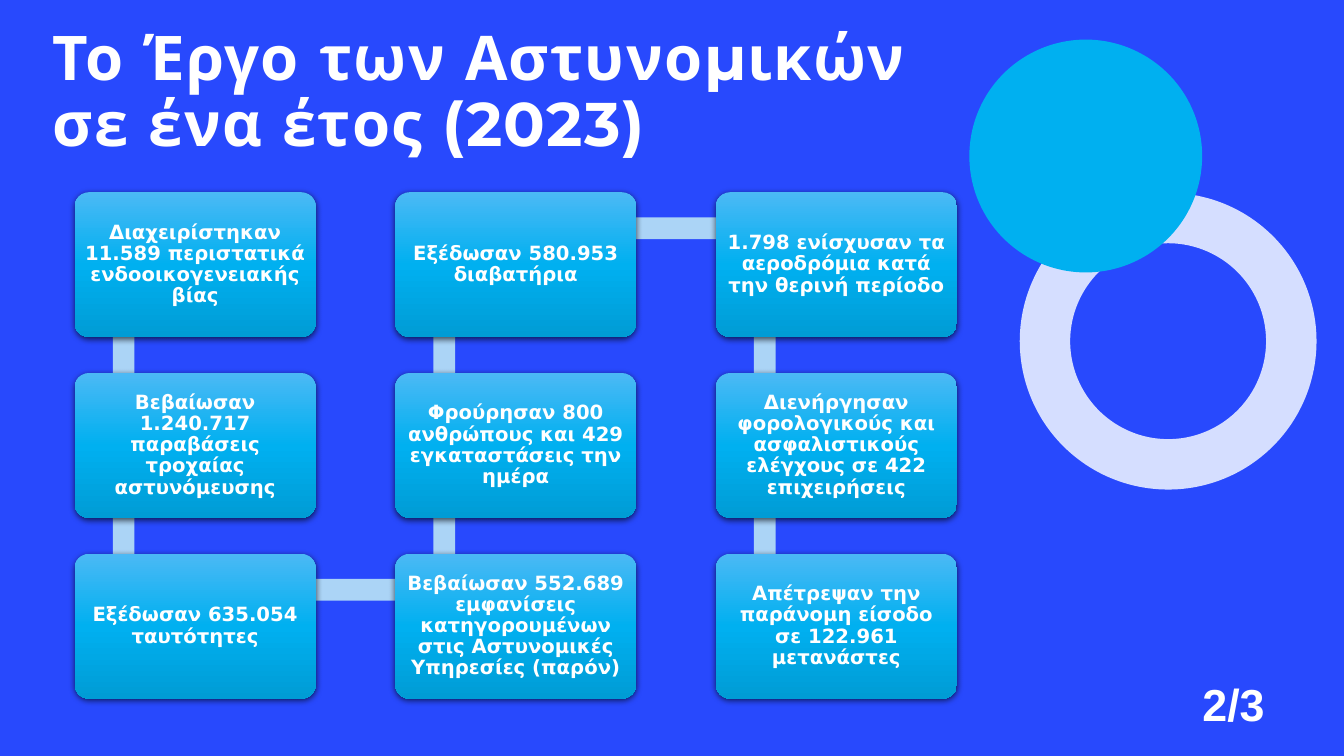
import pptx
import pptx.util
import pptx.dml.color
import pptx.enum.shapes
import pptx.enum.text
import pptx.oxml
import pptx.oxml.ns

Pt = pptx.util.Pt
SHAPES = pptx.enum.shapes.MSO_SHAPE
ANCHOR = pptx.enum.text.MSO_ANCHOR
ALIGN = pptx.enum.text.PP_ALIGN
AUTO_SIZE = pptx.enum.text.MSO_AUTO_SIZE

ACHIEVEMENTS = [
    "Διαχειρίστηκαν 11.589 περιστατικά ενδοοικογενειακής βίας",
    "Βεβαίωσαν 1.240.717 παραβάσεις τροχαίας αστυνόμευσης",
    "Εξέδωσαν 635.054 ταυτότητες",
    "Βεβαίωσαν 552.689 εμφανίσεις κατηγορουμένων στις Αστυνομικές Υπηρεσίες (παρόν)",
    "Φρούρησαν 800 ανθρώπους και 429 εγκαταστάσεις την ημέρα",
    "Εξέδωσαν 580.953 διαβατήρια",
    "1.798 ενίσχυσαν τα αεροδρόμια κατά την θερινή περίοδο",
    "Διενήργησαν φορολογικούς και ασφαλιστικούς ελέγχους σε 422 επιχειρήσεις",
    "Απέτρεψαν την παράνομη είσοδο σε 122.961 μετανάστες",
]
CARD_GRADIENT = [(0, "4BB9F5"), (50, "00B0F0"), (100, "009CD5")]
ROWS = COLUMNS = 3
CARD_WIDTH, CARD_HEIGHT = 172.2, 103.4
BAR_THICKNESS = 15.5
BAR_OFFSET_X, BAR_OFFSET_Y = 35, 25.7


def rgb(value):
    return pptx.dml.color.RGBColor.from_string(value)


def write(frame, text, size, font, margin=None):
    frame.word_wrap = True
    frame.text = text
    if margin is not None:
        frame.margin_left = frame.margin_right = Pt(margin)
        frame.margin_top = frame.margin_bottom = Pt(margin)
    run = frame.paragraphs[0].runs[0]
    run.font.size = Pt(size)
    run.font.name = font
    run.font.bold = True
    run.font.color.rgb = rgb("FFFFFF")
    return run


def add_plain(slide, kind, left, top, width, height, color):
    shape = slide.shapes.add_shape(kind, Pt(left), Pt(top), Pt(width), Pt(height))
    shape.shadow.inherit = False
    shape.fill.solid()
    shape.fill.fore_color.rgb = rgb(color)
    shape.line.fill.background()
    return shape


def add_circles(slide, left, top, width, height):
    ring_size = 212
    disc_size = 166.3
    ring = add_plain(slide, SHAPES.DONUT, left + width - ring_size,
                     top + height - ring_size, ring_size, ring_size, "D5DEFF")
    ring.adjustments[0] = 0.17
    add_plain(slide, SHAPES.OVAL, left, top, disc_size, disc_size, "00B0F0")


def add_title(slide, left, top, width, height):
    title = slide.shapes.title
    title.left, title.top, title.width, title.height = map(Pt, (left, top, width, height))
    frame = title.text_frame
    run = write(frame, "Το Έργο των Αστυνομικών σε ένα έτος (2023)", 44, "Montserrat", 0)
    run.font._element.set("spc", "100")
    frame.auto_size = AUTO_SIZE.NONE
    frame.vertical_anchor = ANCHOR.MIDDLE
    frame.paragraphs[0].alignment = ALIGN.LEFT
    frame.paragraphs[0].line_spacing = 0.9


def add_page_mark(slide, left, top, width, height):
    page_mark = slide.shapes.add_textbox(Pt(left), Pt(top), Pt(width), Pt(height))
    write(page_mark.text_frame, "2/3", 32, "Arial")
    page_mark.text_frame.auto_size = AUTO_SIZE.SHAPE_TO_FIT_TEXT


def style_card(card):
    namespace = pptx.oxml.ns.nsdecls("a")
    stops = "".join(
        f'<a:gs pos="{position * 1000}"><a:srgbClr val="{color}"/></a:gs>'
        for position, color in CARD_GRADIENT)
    gradient = pptx.oxml.parse_xml(
        f'<a:gradFill {namespace} rotWithShape="1"><a:gsLst>{stops}</a:gsLst>'
        '<a:lin ang="5400000" scaled="0"/></a:gradFill>')
    shadow = pptx.oxml.parse_xml(
        f'<a:effectLst {namespace}><a:outerShdw blurRad="{Pt(4.5)}" dist="{Pt(1.5)}" '
        'dir="5400000" algn="ctr" rotWithShape="0"><a:srgbClr val="000000">'
        '<a:alpha val="63000"/></a:srgbClr></a:outerShdw></a:effectLst>')
    card.line.fill.background()
    outline = card._element.spPr.find(pptx.oxml.ns.qn("a:ln"))
    outline.addprevious(gradient)
    outline.addnext(shadow)


def add_card(slide, text, left, top):
    card = slide.shapes.add_shape(SHAPES.ROUNDED_RECTANGLE, Pt(left), Pt(top),
                                  Pt(CARD_WIDTH), Pt(CARD_HEIGHT))
    card.adjustments[0] = 0.1
    style_card(card)
    frame = card.text_frame
    write(frame, text, 14, "DejaVu Sans", 4.3)
    frame.vertical_anchor = ANCHOR.MIDDLE
    frame.paragraphs[0].alignment = ALIGN.CENTER
    frame.paragraphs[0].line_spacing = 0.9


def add_bar(slide, start, end):
    left = min(start[0], end[0]) + BAR_OFFSET_X - BAR_THICKNESS / 2
    top = min(start[1], end[1]) + BAR_OFFSET_Y - BAR_THICKNESS / 2
    width = abs(end[0] - start[0]) + BAR_THICKNESS
    height = abs(end[1] - start[1]) + BAR_THICKNESS
    add_plain(slide, SHAPES.RECTANGLE, left, top, width, height, "ABD4F6")


def add_achievements(slide, left, top, width, height):
    column_step = (width - CARD_WIDTH) / (COLUMNS - 1)
    row_step = (height - CARD_HEIGHT) / (ROWS - 1)
    corners = []
    for index in range(len(ACHIEVEMENTS)):
        column, row = divmod(index, ROWS)
        if column % 2:
            row = ROWS - 1 - row
        corners.append((left + column * column_step, top + row * row_step))
    for start, end in zip(corners, corners[1:]):
        add_bar(slide, start, end)
    for text, corner in zip(ACHIEVEMENTS, corners):
        add_card(slide, text, *corner)


def main():
    deck = pptx.Presentation()
    deck.slide_width, deck.slide_height = Pt(960), Pt(540)
    slide = deck.slides.add_slide(deck.slide_layouts[5])
    slide.background.fill.solid()
    slide.background.fill.fore_color.rgb = rgb("2849FD")
    add_circles(slide, 692.4, 28.3, 248, 321.4)
    add_title(slide, 37.5, 14.4, 671.8, 105)
    add_page_mark(slide, 851.8, 479.5, 86.4, 46)
    add_achievements(slide, 53.3, 137.3, 630.2, 361.7)
    deck.save("out.pptx")


if __name__ == "__main__":
    main()
